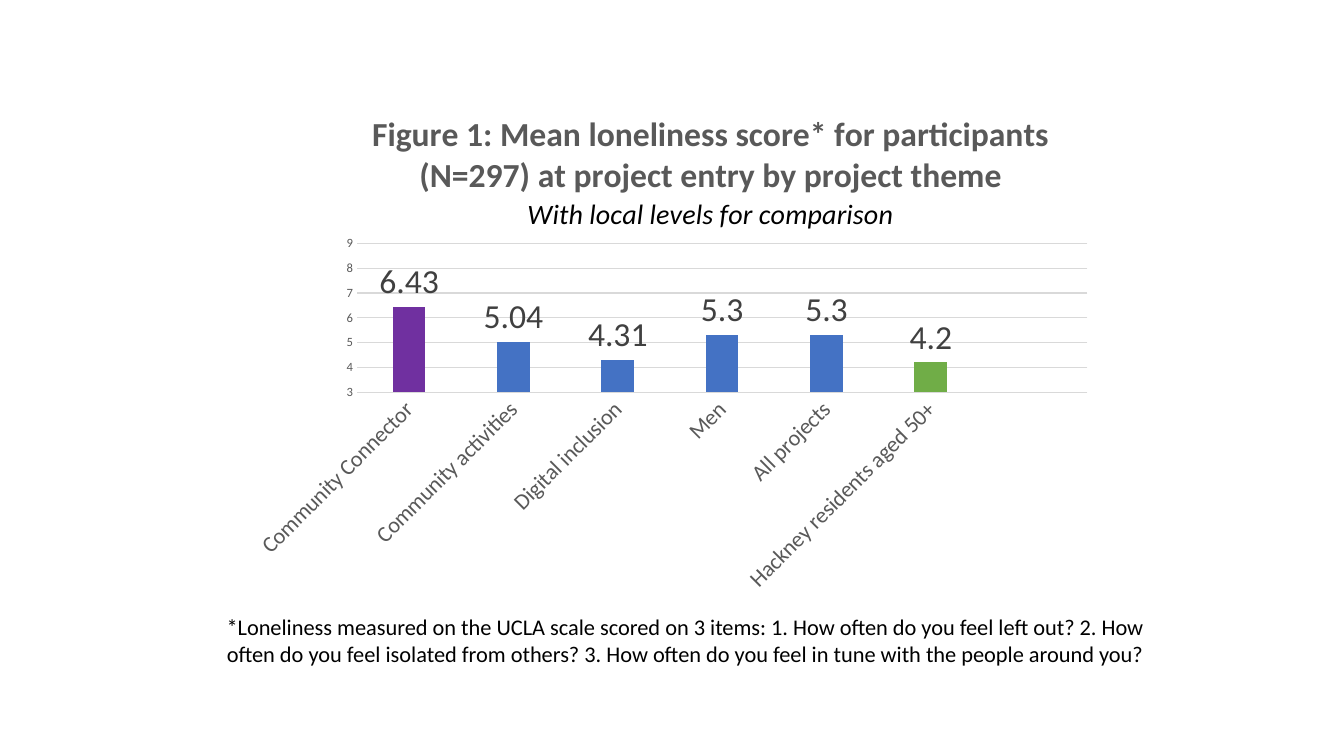
import pptx
import pptx.chart.data
import pptx.dml.color
import pptx.enum.chart
import pptx.enum.text
import pptx.oxml
import pptx.oxml.ns
import pptx.util

WIDTH, HEIGHT = 13.33, 7.5
FONT = "Calibri"
GREY, RULE = "595959", "D9D9D9"
SCORES = [
    ("Community Connector", 6.43),
    ("Community activities", 5.04),
    ("Digital inclusion", 4.31),
    ("Men", 5.3),
    ("All projects", 5.3),
    ("Hackney residents aged 50+", 4.2),
    ("", None),
]
BAR, HIGHLIGHTS = "4472C4", {0: "7030A0", 5: "70AD47"}
TITLE = [
    ("Figure 1: Mean loneliness score* for participants (N=297) "
     "at project entry by project theme",
     dict(size=24, color=GREY, bold=True, italic=False)),
    ("With local levels for comparison",
     dict(size=20, color="000000", bold=False, italic=True)),
]
NOTE = ("*Loneliness measured on the UCLA scale scored on 3 items: "
        "1. How often do you feel left out? "
        "2. How often do you feel isolated from others? "
        "3. How often do you feel in tune with the people around you?")


def rgb(value):
    return pptx.dml.color.RGBColor.from_string(value)


def box(x, y, w, h):
    """Turn shares of the slide into lengths."""
    return [pptx.util.Inches(share * side) for share, side in
            zip((x, y, w, h), (WIDTH, HEIGHT, WIDTH, HEIGHT))]


def set_font(font, size, color, **extra):
    values = dict(name=FONT, size=pptx.util.Pt(size), **extra)
    for key, value in values.items():
        setattr(font, key, value)
    font.color.rgb = rgb(color)


def set_fill(fmt, color):
    fmt.fill.solid()
    fmt.fill.fore_color.rgb = rgb(color)


def set_line(line, color):
    line.color.rgb = rgb(color)
    line.width = pptx.util.Pt(0.75)


def layout_xml(x, y, w=None, h=None):
    """Manual chart layout, in shares of the chart's area."""
    parts = [("xMode", "edge"), ("yMode", "edge"), ("x", x), ("y", y)]
    if w:
        parts = [("layoutTarget", "inner")] + parts + [("w", w), ("h", h)]
    body = "".join(f'<c:{tag} val="{val}"/>' for tag, val in parts)
    return pptx.oxml.parse_xml(
        f'<c:layout {pptx.oxml.ns.nsdecls("c")}>'
        f'<c:manualLayout>{body}</c:manualLayout></c:layout>')


def place(element, layout, after=None):
    for old in element.findall(pptx.oxml.ns.qn("c:layout")):
        element.remove(old)
    if after is None:
        element.insert(0, layout)
    else:
        after.addnext(layout)


def add_title(chart):
    title = chart.chart_title
    tf = title.text_frame
    for i, (text, fmt) in enumerate(TITLE):
        p = tf.paragraphs[0] if i == 0 else tf.add_paragraph()
        p.alignment = pptx.enum.text.PP_ALIGN.CENTER
        r = p.add_run()
        r.text = text
        set_font(r.font, **fmt)
    title.include_in_layout = False
    rich = title._element.find(pptx.oxml.ns.qn("c:tx"))
    place(title._element, layout_xml(0.15, 0.05), rich)


def style_axes(chart):
    none = pptx.enum.chart.XL_TICK_MARK.NONE
    for axis, size in ((chart.category_axis, 16), (chart.value_axis, 9)):
        axis.major_tick_mark = axis.minor_tick_mark = none
        set_font(axis.tick_labels.font, size, GREY)
    cat, val = chart.category_axis, chart.value_axis
    set_line(cat.format.line, RULE)
    # Slant the category names by 45 degrees
    body = cat._element.find(".//" + pptx.oxml.ns.qn("a:bodyPr"))
    body.set("rot", str(-45 * 60000))
    body.set("vert", "horz")
    for key, value in dict(minimum_scale=3, maximum_scale=9,
                           major_unit=1, has_major_gridlines=True).items():
        setattr(val, key, value)
    val.format.line.fill.background()
    set_line(val.major_gridlines.format.line, RULE)


def style_bars(plot):
    for key, value in dict(gap_width=219, overlap=-27, vary_by_categories=False,
                           has_data_labels=True).items():
        setattr(plot, key, value)
    series = plot.series[0]
    series.invert_if_negative = False
    set_fill(series.format, BAR)
    for index, color in HIGHLIGHTS.items():
        set_fill(series.points[index].format, color)
    labels = plot.data_labels
    labels.show_value = True
    labels.position = pptx.enum.chart.XL_LABEL_POSITION.OUTSIDE_END
    set_font(labels.font, 24, "404040")


def add_score_chart(s, *area):
    data = pptx.chart.data.CategoryChartData()
    data.categories = [name for name, _ in SCORES]
    data.add_series("Series 1", [score for _, score in SCORES])
    kind = pptx.enum.chart.XL_CHART_TYPE.COLUMN_CLUSTERED
    chart = s.shapes.add_chart(kind, *box(*area), data).chart
    set_font(chart.font, 10, "000000")
    chart.has_legend = False
    add_title(chart)
    style_axes(chart)
    style_bars(chart.plots[0])
    plot_area = chart._chartSpace.chart.plotArea
    place(plot_area, layout_xml(0.136, 0.307, 0.844, 0.287))


def add_note(s, text, *area):
    tf = s.shapes.add_textbox(*box(*area)).text_frame
    tf.word_wrap = True
    p = tf.paragraphs[0]
    p.alignment = pptx.enum.text.PP_ALIGN.CENTER
    r = p.add_run()
    r.text = text
    set_font(r.font, 16, "000000")


def main():
    prs = pptx.Presentation()
    prs.slide_width, prs.slide_height = box(0, 0, 1, 1)[2:]
    s = prs.slides.add_slide(prs.slide_layouts[6])
    # Footnote below, chart above
    add_note(s, NOTE, 0.149, 0.804, 0.722, 0.085)
    add_score_chart(s, 0.178, 0.111, 0.644, 0.687)
    prs.save("out.pptx")


if __name__ == "__main__":
    main()
